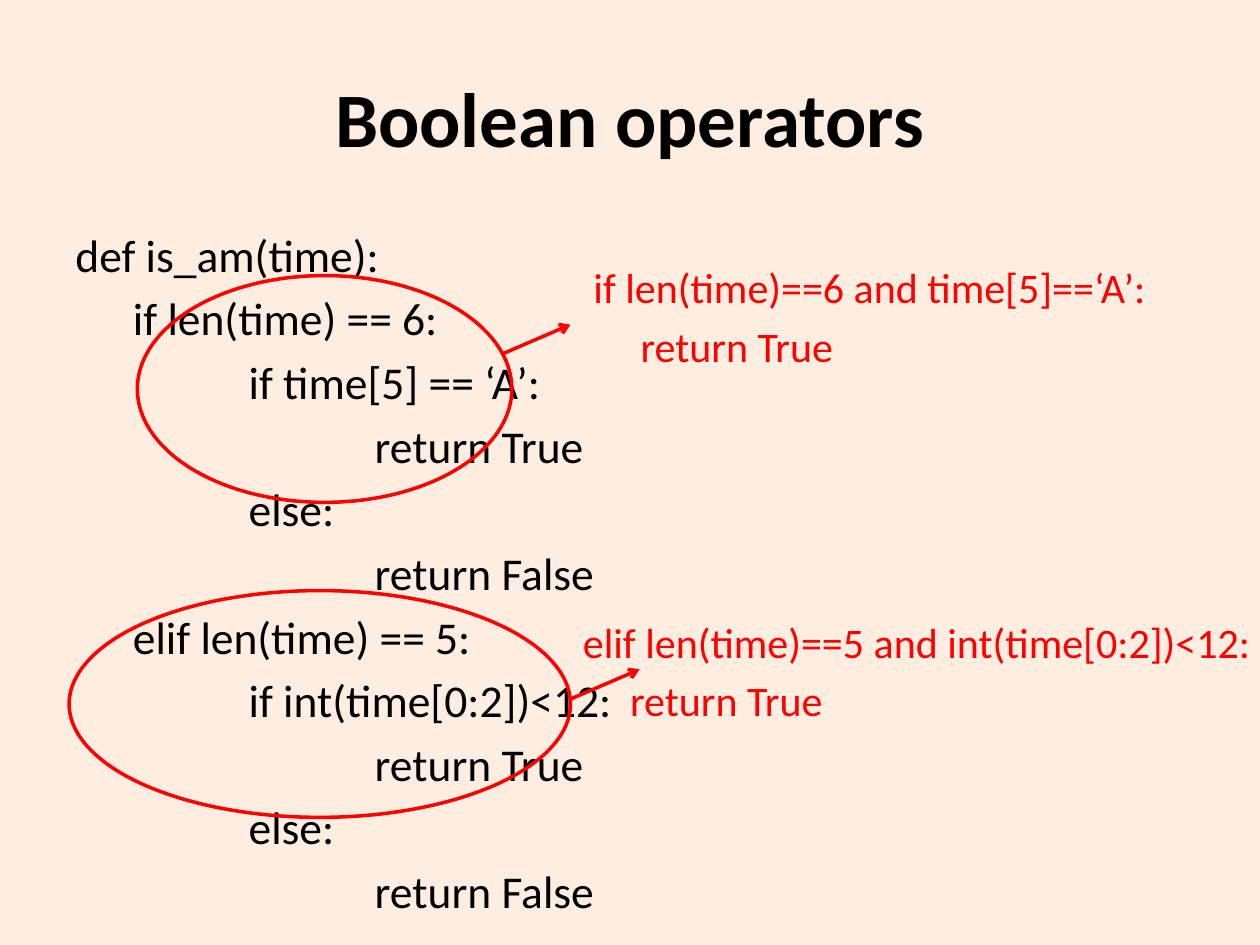
"""Build a slide that folds nested if tests into Boolean operators."""
import dataclasses

import pptx
import pptx.dml.color
import pptx.enum.shapes
import pptx.enum.text
import pptx.oxml
import pptx.oxml.ns
import pptx.util

Pt = pptx.util.Pt
HUES = {"back": "FEEEE1", "ink": "000000", "mark": "FF0000"}
FONT = "Calibri"
HANG = 27
TAB = 72
CODE = [
    "def is_am(time):",
    "\t if len(time) == 6:",
    "\t\tif time[5] == ‘A’:",
    "\t\t\treturn True",
    "\t\telse:",
    "\t\t\treturn False",
    "\t elif len(time) == 5:",
    "\t\tif int(time[0:2])<12:",
    "\t\t\treturn True",
    "\t\telse:",
    "\t\t\treturn False",
]


@dataclasses.dataclass
class Box:
    left: float
    top: float
    width: float
    height: float

    def points(self) -> tuple:
        return Pt(self.left), Pt(self.top), Pt(self.width), Pt(self.height)


@dataclasses.dataclass
class Note:
    ring: Box
    start: tuple
    end: tuple
    box: Box
    test: str


NOTES = [
    Note(Box(78.5, 157.5, 214, 129.6), (286.5, 202.5), (326, 185.5),
         Box(332, 146, 394, 186), "if len(time)==6 and time[5]==‘A’:"),
    Note(Box(39.5, 337.5, 286.5, 129.6), (326, 399.5), (365.5, 382.5),
         Box(326, 348.5, 410.5, 112), "elif len(time)==5 and int(time[0:2])<12:"),
]


def tint(name: str) -> pptx.dml.color.RGBColor:
    return pptx.dml.color.RGBColor.from_string(HUES[name])


def write(frame, lines: list, size: float, hue: str = "ink", bold: bool = False,
          align=pptx.enum.text.PP_ALIGN.LEFT, hang: float = 0, gap: float = 0) -> None:
    frame.word_wrap = True
    frame.auto_size = pptx.enum.text.MSO_AUTO_SIZE.NONE
    for index, line in enumerate(lines):
        para = frame.paragraphs[0] if index == 0 else frame.add_paragraph()
        para.alignment = align
        para.space_before = Pt(gap)
        if hang:
            props = para._p.get_or_add_pPr()
            props.set("marL", str(Pt(hang)))
            props.set("indent", str(-Pt(hang)))
            props.set("defTabSz", str(Pt(TAB)))
        run = para.add_run()
        run.text = line
        run.font.name = FONT
        run.font.size = Pt(size)
        run.font.bold = bold
        run.font.color.rgb = tint(hue)


def add_code(slide, box: Box, lines: list, size: float, hue: str = "ink") -> None:
    frame = slide.shapes.add_textbox(*box.points()).text_frame
    write(frame, lines, size, hue=hue, hang=HANG, gap=size * 0.2)


def ink(shape) -> None:
    shape.line.color.rgb = tint("mark")
    shape.line.width = Pt(2)


def add_ring(slide, box: Box) -> None:
    kind = pptx.enum.shapes.MSO_SHAPE.OVAL
    ring = slide.shapes.add_shape(kind, *box.points())
    ring.shadow.inherit = False
    ring.fill.background()
    ink(ring)


def add_arrow(slide, start: tuple, end: tuple) -> None:
    kind = pptx.enum.shapes.MSO_CONNECTOR.STRAIGHT
    ends = [Pt(value) for value in start + end]
    arrow = slide.shapes.add_connector(kind, *ends)
    ink(arrow)
    props = arrow._element.spPr
    tip = pptx.oxml.parse_xml(f'<a:tailEnd {pptx.oxml.ns.nsdecls("a")} type="arrow"/>')
    props.get_or_add_ln().append(tip)
    props.append(pptx.oxml.parse_xml(f'<a:effectLst {pptx.oxml.ns.nsdecls("a")}/>'))


def main() -> None:
    deck = pptx.Presentation()
    deck.slide_width, deck.slide_height = Pt(720), Pt(540)
    slide = deck.slides.add_slide(deck.slide_layouts.get_by_name("Title Only"))
    slide.background.fill.solid()
    slide.background.fill.fore_color.rgb = tint("back")

    title = slide.shapes.title
    title.left, title.top, title.width, title.height = Box(36, 21.6, 648, 90).points()
    title.text_frame.vertical_anchor = pptx.enum.text.MSO_ANCHOR.MIDDLE
    write(title.text_frame, ["Boolean operators"], 44, bold=True,
          align=pptx.enum.text.PP_ALIGN.CENTER)

    add_code(slide, Box(36, 126, 442, 414), CODE, 26)
    for note in NOTES:
        add_ring(slide, note.ring)
        add_arrow(slide, note.start, note.end)
        add_code(slide, note.box, [note.test, "\treturn True"], 24, hue="mark")
    deck.save("out.pptx")


if __name__ == "__main__":
    main()
